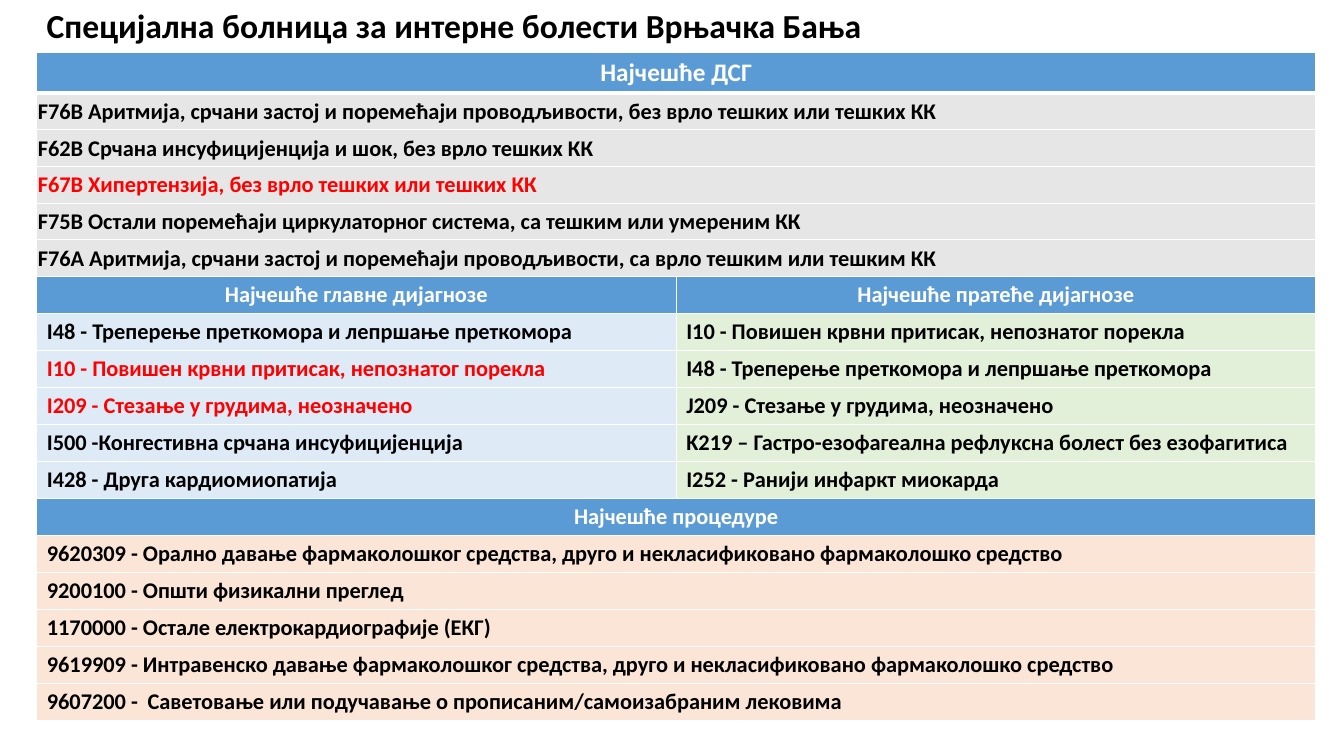
from lxml import etree
from pptx import Presentation
from pptx.dml.color import RGBColor
from pptx.enum.text import MSO_ANCHOR, PP_ALIGN
from pptx.oxml.ns import qn
from pptx.util import Pt

LEFT, CENTER = PP_ALIGN.LEFT, PP_ALIGN.CENTER
TOP, MIDDLE = MSO_ANCHOR.TOP, MSO_ANCHOR.MIDDLE
PX = 9525
FONT = "Calibri"
COLORS = {
    "black": "000000", "white": "FFFFFF", "red": "FF0000", "header": "5B9BD5",
    "groups": "E7E6E6", "main": "DEEBF7", "secondary": "E2F0D9", "procedures": "FBE5D6",
}

TITLE = "Специјална болница за интерне болести Врњачка Бања"
SECTIONS = [
    (["Најчешће ДСГ"], ["groups"], [
        ["F76B Аритмија, срчани застој и поремећаји проводљивости, без врло тешких или тешких КК"],
        ["F62B Срчана инсуфицијенција и шок, без врло тешких КК"],
        ["F67B Хипертензија, без врло тешких или тешких КК"],
        ["F75B Остали поремећаји циркулаторног система, са тешким или умереним КК"],
        ["F76A Аритмија, срчани застој и поремећаји проводљивости, са врло тешким или тешким КК"],
    ]),
    (["Најчешће главне дијагнозе", "Најчешће пратеће дијагнозе"], ["main", "secondary"], [
        ["I48 - Треперење преткомора и лепршање преткомора",
         "I10 - Повишен крвни притисак, непознатог порекла"],
        ["I10 - Повишен крвни притисак, непознатог порекла",
         "I48 - Треперење преткомора и лепршање преткомора"],
        ["I209 - Стезање у грудима, неозначено", "J209 - Стезање у грудима, неозначено"],
        ["I500 -Конгестивна срчана инсуфицијенција",
         "K219 – Гастро-езофагеална рефлуксна болест без езофагитиса"],
        ["I428 - Друга кардиомиопатија", "I252 - Ранији инфаркт миокарда"],
    ]),
    (["Најчешће процедуре"], ["procedures"], [
        ["9620309 - Орално давање фармаколошког средства, друго и некласификовано фармаколошко средство"],
        ["9200100 - Општи физикални преглед"],
        ["1170000 - Остале електрокардиографије (ЕКГ)"],
        ["9619909 - Интравенско давање фармаколошког средства, друго и некласификовано фармаколошко средство"],
        ["9607200 - \tСаветовање или подучавање о прописаним/самоизабраним лековима"],
    ]),
]
RED_CELLS = {(3, 0), (8, 0), (9, 0)}
TITLE_BOX = (35, -15, 1146, 83)
TABLE_LEFT, TABLE_TOP = 35, 50
COLUMN_WIDTH, ROW_HEIGHT = 609, 35


def write_text(frame, text, size=16, color="black", align=LEFT, spacing=None):
    frame.word_wrap = True
    para = frame.paragraphs[0]
    para.alignment = align
    para.line_spacing = spacing
    span = para.add_run()
    span.text = text
    span.font.name = FONT
    span.font.size = Pt(size)
    span.font.bold = True
    span.font.color.rgb = RGBColor.from_string(COLORS[color])


def style_cell(cell, fill, top=1, bottom=1):
    properties = cell._tc.get_or_add_tcPr()
    for side, width in (("L", 1), ("R", 1), ("T", top), ("B", bottom)):
        line = etree.SubElement(properties, qn("a:ln" + side), w=str(Pt(width)))
        solid = etree.SubElement(line, qn("a:solidFill"))
        etree.SubElement(solid, qn("a:srgbClr"), val=COLORS["white"])
    cell.fill.solid()
    cell.fill.fore_color.rgb = RGBColor.from_string(COLORS[fill])


def table_rows():
    for headings, fills, entries in SECTIONS:
        yield headings, ["header"] * len(headings)
        for entry in entries:
            yield entry, fills


def add_table(page):
    rows = list(table_rows())
    table = page.shapes.add_table(
        len(rows), 2, TABLE_LEFT * PX, TABLE_TOP * PX,
        2 * COLUMN_WIDTH * PX, len(rows) * ROW_HEIGHT * PX).table
    table.first_row = False
    table.horz_banding = False
    for r, (texts, fills) in enumerate(rows):
        table.rows[r].height = ROW_HEIGHT * PX
        for c in range(2):
            style_cell(table.cell(r, c), fills[min(c, len(fills) - 1)],
                       top=3 if r == 1 else 1, bottom=3 if r == 0 else 1)
        if len(texts) == 1:
            table.cell(r, 0).merge(table.cell(r, 1))
        for c, text in enumerate(texts):
            cell = table.cell(r, c)
            cell.vertical_anchor = TOP
            if fills[c] == "groups":
                cell.vertical_anchor = MIDDLE
                cell.margin_left = cell.margin_right = cell.margin_top = PX
                cell.margin_bottom = 0
            if fills[c] == "header":
                write_text(cell.text_frame, text, size=18 if r == 0 else 16,
                           color="white", align=CENTER)
            else:
                write_text(cell.text_frame, text,
                           color="red" if (r, c) in RED_CELLS else "black")


def main():
    deck = Presentation()
    deck.slide_width, deck.slide_height = 1280 * PX, 720 * PX
    page = deck.slides.add_slide(deck.slide_layouts[6])
    box = page.shapes.add_textbox(*(value * PX for value in TITLE_BOX))
    box.text_frame.vertical_anchor = MIDDLE
    write_text(box.text_frame, TITLE, size=24, spacing=0.9)
    add_table(page)
    deck.save("out.pptx")


if __name__ == "__main__":
    main()
